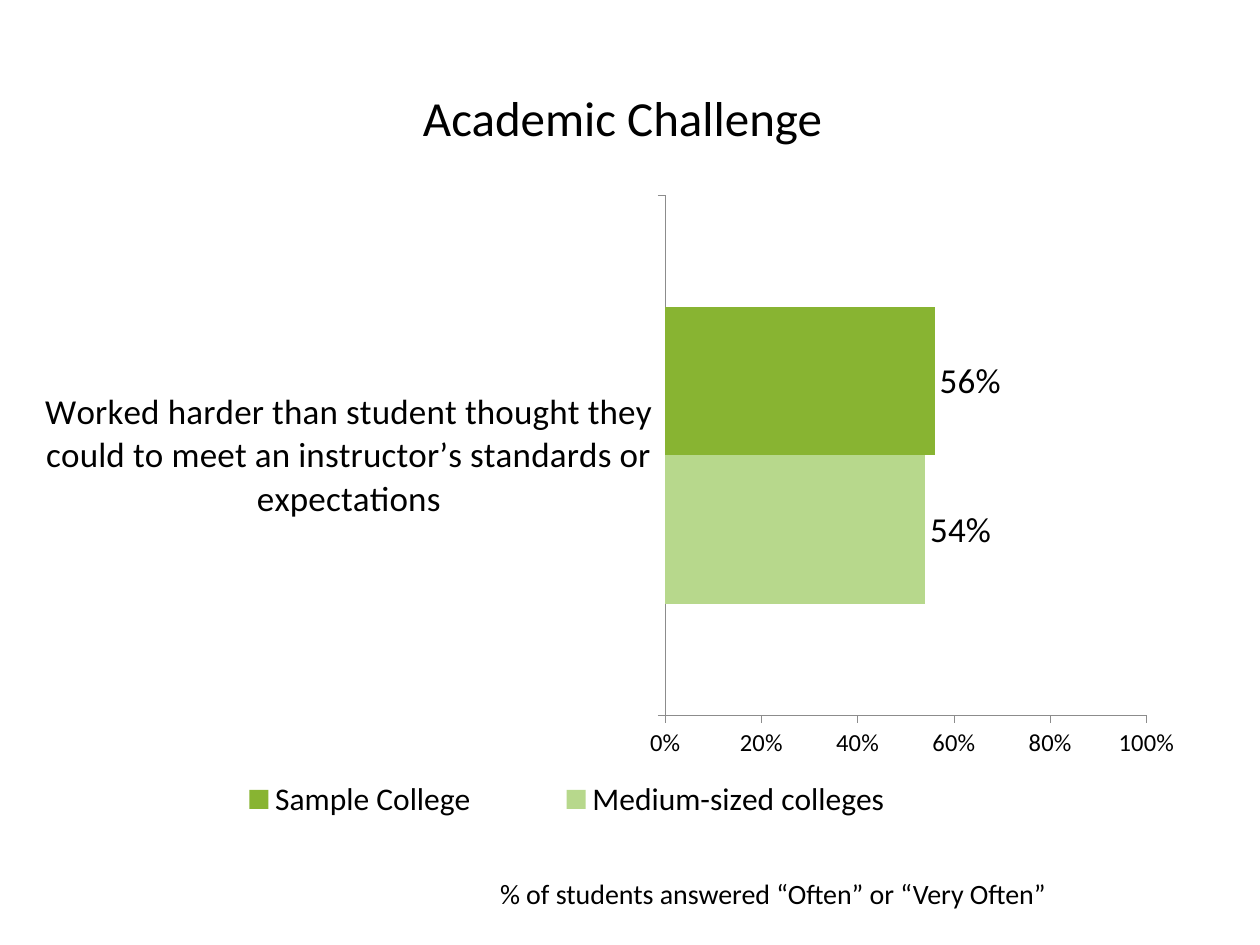
"""Build the Academic Challenge slide with a clustered bar chart."""
from lxml.etree import SubElement
from pptx import Presentation
from pptx.chart.data import CategoryChartData
from pptx.dml.color import RGBColor
from pptx.enum.chart import XL_CHART_TYPE as ChartType
from pptx.enum.chart import XL_LABEL_POSITION as LabelPosition
from pptx.enum.chart import XL_LEGEND_POSITION as LegendPosition
from pptx.enum.chart import XL_TICK_MARK as TickMark
from pptx.enum.text import MSO_ANCHOR as Anchor
from pptx.enum.text import PP_ALIGN as Align
from pptx.oxml.ns import qn
from pptx.util import Inches, Pt

BLACK = RGBColor(0x00, 0x00, 0x00)
GRAY = RGBColor(0x8C, 0x8C, 0x8C)
GREEN = RGBColor(0x88, 0xB4, 0x32)
LIGHT_GREEN = RGBColor(0xB7, 0xD8, 0x8C)

TEXTS = [
    ("Academic Challenge", (0.94, 0.45, 8, 1.01), 28,
     {"alignment": Align.CENTER, "line_spacing": 0.9}, Anchor.MIDDLE),
    ("% of students answered “Often” or “Very Often”", (3.87, 6.91, 5.75, 0.37), 16,
     {"alignment": Align.LEFT}, Anchor.TOP),
]
CATEGORY = ("Worked harder than student thought they could to meet "
            "an instructor’s standards or expectations")
SERIES = [
    ("Medium-sized colleges", 0.54, LIGHT_GREEN),
    ("Sample College", 0.56, GREEN),
]
CHART_BOX = (0.17, 1.45, 9.33, 5.15)
PLOT_BOX = (5.28, 1.55, 3.82, 4.13)
LEGEND_BOX = (1.3, 6.14, 6.4, 0.41)


def set_format(target, values):
    for name, value in values.items():
        setattr(target, name, value)


def set_font(font, size):
    set_format(font, {"name": "Calibri", "size": Pt(size), "bold": False})
    font.color.rgb = BLACK


def add_text(slide, text, box, size, paragraph_format, anchor):
    frame = slide.shapes.add_textbox(*map(Inches, box)).text_frame
    set_format(frame, {"word_wrap": True, "vertical_anchor": anchor})
    paragraph = frame.paragraphs[0]
    set_format(paragraph, paragraph_format)
    run = paragraph.add_run()
    run.text = text
    set_font(run.font, size)


def place(parent, index, box, inner=False):
    for old_layout in parent.findall(qn("c:layout")):
        parent.remove(old_layout)
    layout = SubElement(parent, qn("c:layout"))
    parent.insert(index, layout)
    manual = SubElement(layout, qn("c:manualLayout"))
    left, top, width, height = CHART_BOX
    values = [("xMode", "edge"), ("yMode", "edge"),
              ("x", (box[0] - left) / width), ("y", (box[1] - top) / height),
              ("w", box[2] / width), ("h", box[3] / height)]
    if inner:
        values.insert(0, ("layoutTarget", "inner"))
    for name, value in values:
        SubElement(manual, qn(f"c:{name}")).set("val", str(value))


def add_bar_chart(slide):
    data = CategoryChartData(number_format="0%")
    data.categories = [CATEGORY]
    for name, value, _ in SERIES:
        data.add_series(name, [value])
    chart = slide.shapes.add_chart(
        ChartType.BAR_CLUSTERED, *map(Inches, CHART_BOX), data).chart
    set_format(chart, {"has_title": False, "has_legend": True})
    set_font(chart.font, 18)

    plot = chart.plots[0]
    set_format(plot, {"gap_width": 150, "overlap": 0, "vary_by_categories": False})
    for series, (_, _, color) in zip(plot.series, SERIES):
        series.format.fill.solid()
        series.format.fill.fore_color.rgb = color
        labels = series.data_labels
        set_format(labels, {"show_value": True, "number_format": "0%",
                            "number_format_is_linked": False,
                            "position": LabelPosition.OUTSIDE_END})
        set_font(labels.font, 20)

    set_format(chart.value_axis, {"minimum_scale": 0, "maximum_scale": 1, "major_unit": 0.2})
    set_format(chart.value_axis.tick_labels,
               {"number_format": "0%", "number_format_is_linked": False})
    for axis, size in ((chart.category_axis, 20), (chart.value_axis, 14)):
        set_format(axis, {"has_major_gridlines": False, "major_tick_mark": TickMark.OUTSIDE,
                          "minor_tick_mark": TickMark.NONE})
        set_font(axis.tick_labels.font, size)
        axis.format.line.color.rgb = GRAY
        axis.format.line.width = Pt(0.5)

    legend = chart.legend
    set_format(legend, {"position": LegendPosition.BOTTOM, "include_in_layout": False})
    set_font(legend.font, 18)
    place(legend._element, 1, LEGEND_BOX)
    place(chart._chartSpace.chart.plotArea, 0, PLOT_BOX, inner=True)


def main():
    presentation = Presentation()
    set_format(presentation, {"slide_width": Inches(10), "slide_height": Inches(7.5)})
    slide = presentation.slides.add_slide(presentation.slide_layouts[6])
    add_bar_chart(slide)
    for text in TEXTS:
        add_text(slide, *text)
    presentation.save("out.pptx")


if __name__ == "__main__":
    main()
